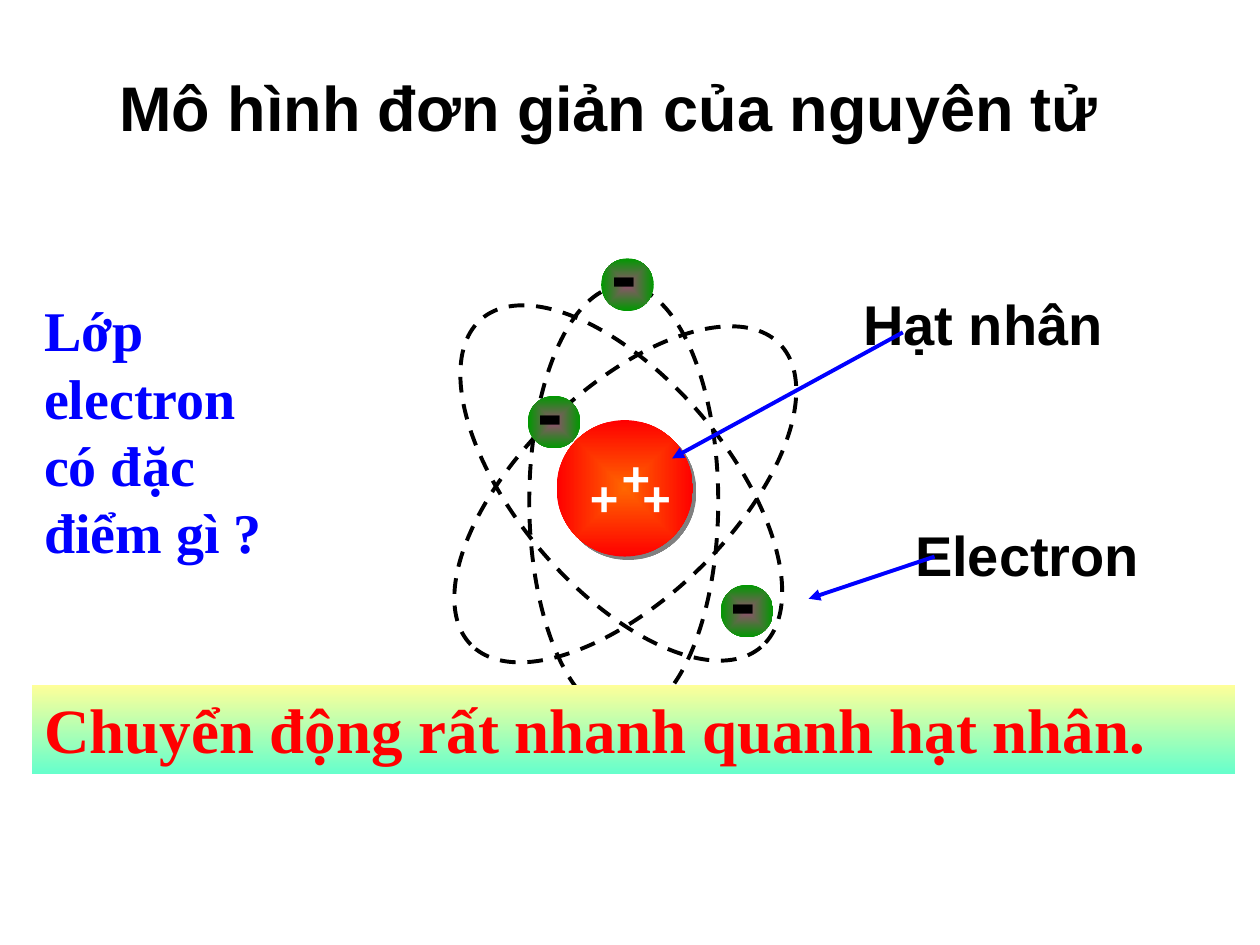
from lxml.etree import SubElement
from pptx import Presentation
from pptx.dml.color import RGBColor
from pptx.enum.dml import MSO_LINE
from pptx.enum.shapes import MSO_CONNECTOR, MSO_SHAPE
from pptx.enum.text import MSO_ANCHOR, PP_ALIGN
from pptx.oxml.ns import qn
from pptx.util import Cm, Pt

COLORS = {
    "black": "000000", "white": "FFFFFF", "blue": "0000FF", "red": "FF0000",
    "orange": "FF6600", "mauve": "954F72", "green": "009900",
    "yellow": "FFFF99", "mint": "66FFCC", "gray": "808080",
}
SANS, SERIF = "Arial", "Times New Roman"


def rgb(name):
    return RGBColor.from_string(COLORS[name])


class AtomSlide:
    """Holds the current slide and draws its elements; lengths are in cm."""

    line_width = Pt(2.25)

    def __init__(self, presentation):
        self.slide = presentation.slides.add_slide(presentation.slide_layouts[6])

    def set_text(self, shape, text, size, color, font):
        frame = shape.text_frame
        frame.word_wrap = True
        frame.vertical_anchor = MSO_ANCHOR.TOP
        paragraph = frame.paragraphs[0]
        paragraph.text = text
        paragraph.alignment = PP_ALIGN.LEFT
        paragraph.font.size = Pt(size)
        paragraph.font.bold = True
        paragraph.font.name = font
        paragraph.font.color.rgb = rgb(color)
        # Half a line of space before
        properties = paragraph._p.get_or_add_pPr()
        space = SubElement(properties, qn("a:spcBef"))
        SubElement(space, qn("a:spcPct"), val="50000")
        properties.insert(0, space)

    def text(self, box, text, size, color="black", font=SANS, parent=None):
        shapes = (parent or self.slide).shapes
        self.set_text(shapes.add_textbox(*map(Cm, box)), text, size, color, font)

    def shape(self, kind, box, parent=None):
        shape = (parent or self.slide).shapes.add_shape(kind, *map(Cm, box))
        shape.shadow.inherit = False
        shape.line.fill.background()
        return shape

    def gradient(self, shape, first, last, radial=False):
        shape.fill.gradient()
        for stop, color in zip(shape.fill.gradient_stops, (first, last)):
            stop.color.rgb = rgb(color)
        shape.fill.gradient_angle = 270
        if radial:
            gradient = shape._element.spPr.find(qn("a:gradFill"))
            gradient.remove(gradient.find(qn("a:lin")))
            focus = SubElement(gradient, qn("a:path"), path="shape")
            SubElement(focus, qn("a:fillToRect"), l="50000", t="50000", r="50000", b="50000")

    def nucleus(self, box):
        shape = self.shape(MSO_SHAPE.OVAL, box)
        self.gradient(shape, "orange", "red", radial=True)
        effects = shape._element.spPr.find(qn("a:effectLst"))
        shadow = SubElement(effects, qn("a:outerShdw"), dist=str(Pt(2.8)), dir="2700000",
                            algn="ctr", rotWithShape="0")
        SubElement(shadow, qn("a:srgbClr"), val=COLORS["gray"])

    def orbit(self, box, rotation):
        shape = self.shape(MSO_SHAPE.OVAL, box)
        shape.fill.background()
        shape.line.color.rgb = rgb("black")
        shape.line.width = self.line_width
        shape.line.dash_style = MSO_LINE.DASH
        shape.rotation = rotation

    def electron(self, left, top):
        group = self.slide.shapes.add_group_shape()
        ball = self.shape(MSO_SHAPE.OVAL, (left, top, 1.06, 1.06), group)
        self.gradient(ball, "mauve", "green", radial=True)
        self.text((left - 0.05, top - 0.78, 0.69, 2.11), "-", 44, parent=group)

    def arrow(self, *ends):
        connector = self.slide.shapes.add_connector(MSO_CONNECTOR.STRAIGHT, *map(Cm, ends))
        connector.line.color.rgb = rgb("blue")
        connector.line.width = self.line_width
        SubElement(connector.line._get_or_add_ln(), qn("a:tailEnd"), type="triangle")
        SubElement(connector._element.spPr, qn("a:effectLst"))

    def banner(self, box, text):
        shape = self.shape(MSO_SHAPE.RECTANGLE, box)
        self.gradient(shape, "yellow", "mint")
        self.set_text(shape, text, 36, "red", SERIF)


def main():
    presentation = Presentation()
    presentation.slide_width, presentation.slide_height = Cm(25.4), Cm(19.05)
    atom = AtomSlide(presentation)

    # Title
    atom.text((2.16, 1.25, 23.8, 1.78), "Mô hình đơn giản của nguyên tử", 36)

    # Nucleus and orbits
    atom.nucleus((11.22, 8.47, 2.75, 2.75))
    atom.orbit((8.26, 7.85, 8.69, 4.23), 315.8)
    atom.orbit((8.18, 7.62, 8.69, 4.23), 229.6)
    atom.orbit((8.23, 8.2, 8.69, 3.81), 270)

    # Charges
    for left, top in ((12.28, 8.89), (12.7, 9.31), (11.64, 9.31)):
        atom.text((left, top, 1.27, 1.44), "+", 28, "white")
    for left, top in ((10.64, 7.98), (14.53, 11.79), (12.12, 5.21)):
        atom.electron(left, top)

    # Labels with arrows
    atom.text((17.15, 5.72, 6.15, 1.6), "Hạt nhân", 32)
    atom.text((18.2, 10.37, 6.7, 1.6), "Electron", 32)
    atom.arrow(18.84, 11.22, 16.3, 12.07)
    atom.arrow(18.2, 6.7, 13.55, 9.24)

    # Question and answer
    atom.text((0.64, 5.84, 5.64, 5.74), "Lớp electron có đặc điểm gì ?", 32, "blue", SERIF)
    atom.banner((0.64, 13.8, 24.26, 1.8), "Chuyển động rất nhanh quanh hạt nhân.")

    presentation.save("out.pptx")


if __name__ == "__main__":
    main()
